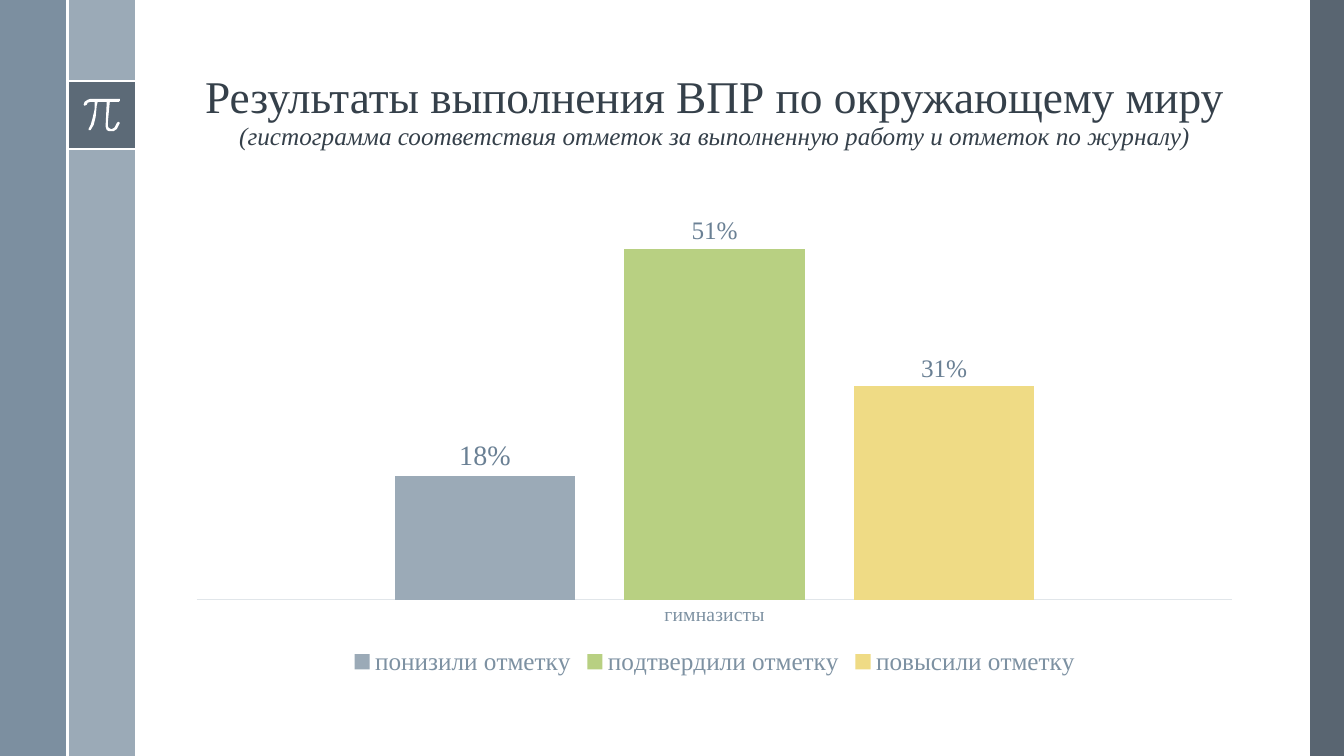
from lxml import etree
from pptx import Presentation
from pptx.chart import data as chart_data
from pptx.dml.color import RGBColor
from pptx.enum import chart as chart_enum, shapes, text
from pptx.oxml import ns
from pptx.util import Cm, Pt

FONT = "Times New Roman"
COLORS = {
    "dark": "475562",
    "steel": "6A8093",
    "mist": "9BAAB7",
    "white": "FFFFFF",
    "title": "35404A",
    "chart_text": "465562",
    "axis_text": "7D91A2",
    "label_text": "6A8094",
    "axis_line": "E1E6EA",
    "green": "B8D082",
    "yellow": "EFDB85",
}
PAGE_WIDTH, PAGE_HEIGHT = 33.87, 19.05
BAND = 1.7  # width of each left band and side of the square tab
TAB_TOP = 2.05
CONTENT_LEFT, CONTENT_WIDTH = 4.42, 27.18

# Outline of the pi sign, in hundredths of an inch
PI_OUTLINE = [
    (118, 98), (90, 98), (87, 99), (84.5, 101), (83, 104), (83.5, 105),
    (84.5, 105), (85.5, 104), (87, 102), (90, 101), (94, 101), (93.5, 108),
    (92, 117), (90, 124), (87.5, 127.5), (88, 129), (89, 129.3), (90, 129),
    (93, 124), (95, 116), (96.5, 105), (97, 101), (106, 101), (104.7, 122),
    (104.8, 125.5), (106.5, 128.7), (108, 129.7), (110, 130), (113, 129.5),
    (116, 127.5), (118, 124.5), (119, 122), (118, 121), (117, 121),
    (116, 122), (114.5, 125.5), (113, 127), (111, 128), (109.5, 128),
    (108, 127), (107, 125), (107, 122), (109, 101), (118, 101),
    (119, 100.5), (119, 98.5),
]


def rgb(name):
    return RGBColor.from_string(COLORS[name])


def style_font(font, size, color):
    font.name = FONT
    font.size = Pt(size)
    font.color.rgb = rgb(color)


def fill_shape(shape, color, opacity=100):
    shape.shadow.inherit = False
    shape.line.fill.background()
    shape.fill.solid()
    shape.fill.fore_color.rgb = rgb(color)
    if opacity < 100:
        color_node = shape.fill._xPr.find(".//" + ns.qn("a:srgbClr"))
        etree.SubElement(color_node, ns.qn("a:alpha"), val=str(opacity * 1000))


def add_band(page, left, top, width, height, color, opacity=100):
    band = page.shapes.add_shape(
        shapes.MSO_SHAPE.RECTANGLE, Cm(left), Cm(top), Cm(width), Cm(height))
    fill_shape(band, color, opacity)


def add_rule(page, x1, y1, x2, y2):
    rule = page.shapes.add_connector(
        shapes.MSO_CONNECTOR.STRAIGHT, Cm(x1), Cm(y1), Cm(x2), Cm(y2))
    rule.line.color.rgb = rgb("white")
    rule.line.width = Pt(1.5)
    etree.SubElement(rule._element.spPr, ns.qn("a:effectLst"))


def add_pi_sign(page):
    start, *rest = PI_OUTLINE
    builder = page.shapes.build_freeform(*start, scale=Cm(2.54) / 100)
    builder.add_line_segments(rest, close=True)
    fill_shape(builder.convert_to_shape(), "white")


def add_span(para, words, size, italic=False):
    span = para.add_run()
    span.text = words
    style_font(span.font, size, "title")
    span.font.italic = italic


def fill_title(page):
    box = page.shapes.title
    box.left, box.top = Cm(CONTENT_LEFT), Cm(0.48)
    box.width, box.height = Cm(CONTENT_WIDTH), Cm(3.45)
    frame = box.text_frame
    frame.word_wrap = True
    frame.auto_size = text.MSO_AUTO_SIZE.NONE
    frame.vertical_anchor = text.MSO_ANCHOR.BOTTOM
    para = frame.paragraphs[0]
    para.alignment = text.PP_ALIGN.CENTER
    para.line_spacing = 0.9
    add_span(para, "Результаты выполнения ВПР по окружающему миру", 32.4)
    para.add_line_break()
    # The break takes the size of the heading line
    line_break = para._p.find(ns.qn("a:br"))
    etree.SubElement(line_break, ns.qn("a:rPr"), sz="3240")
    add_span(para, "(гистограмма соответствия отметок за выполненную работу "
                   "и отметок по журналу)", 18, italic=True)


def style_series(series, color, label_size):
    series.format.fill.solid()
    series.format.fill.fore_color.rgb = rgb(color)
    labels = series.data_labels
    labels.show_value = True
    labels.number_format = "0%"
    labels.number_format_is_linked = False
    labels.position = chart_enum.XL_LABEL_POSITION.OUTSIDE_END
    style_font(labels.font, label_size, "label_text")


def add_results_chart(page):
    results = [
        ("понизили отметку", 0.18, "mist", 20),
        ("подтвердили отметку", 0.51, "green", 18),
        ("повысили отметку", 0.31, "yellow", 18),
    ]
    data = chart_data.CategoryChartData(number_format="0%")
    data.categories = ["гимназисты"]
    for name, share, _, _ in results:
        data.add_series(name, [share])
    chart = page.shapes.add_chart(
        chart_enum.XL_CHART_TYPE.COLUMN_CLUSTERED, Cm(CONTENT_LEFT), Cm(4.45),
        Cm(CONTENT_WIDTH), Cm(12.7), data).chart
    chart.has_title = False
    style_font(chart.font, 10, "chart_text")

    # Columns
    plot = chart.plots[0]
    plot.vary_by_categories = False
    plot.gap_width = 219
    plot.overlap = -27
    for series, (_, _, color, label_size) in zip(plot.series, results):
        style_series(series, color, label_size)

    # Axes
    groups = chart.category_axis
    groups.major_tick_mark = chart_enum.XL_TICK_MARK.NONE
    groups.format.line.color.rgb = rgb("axis_line")
    groups.format.line.width = Pt(0.75)
    style_font(groups.tick_labels.font, 14, "axis_text")
    shares = chart.value_axis
    shares.visible = False
    shares.has_major_gridlines = False
    shares.minimum_scale, shares.maximum_scale = 0, 0.6

    # Legend
    chart.has_legend = True
    chart.legend.position = chart_enum.XL_LEGEND_POSITION.BOTTOM
    chart.legend.include_in_layout = False
    style_font(chart.legend.font, 18, "axis_text")


def main():
    deck = Presentation()
    deck.slide_width, deck.slide_height = Cm(PAGE_WIDTH), Cm(PAGE_HEIGHT)
    page = deck.slides.add_slide(deck.slide_layouts[5])

    # Side bands and the tab with the pi sign
    add_band(page, 33.02, 0, 0.85, PAGE_HEIGHT, "dark", 90)
    add_band(page, BAND, 0, BAND, PAGE_HEIGHT, "mist")
    add_band(page, 0, 0, BAND, PAGE_HEIGHT, "steel", 88)
    add_band(page, BAND, TAB_TOP, BAND, BAND, "dark", 75)
    for y in (TAB_TOP, TAB_TOP + BAND):
        add_rule(page, BAND, y, 2 * BAND, y)
    add_pi_sign(page)
    add_rule(page, BAND, 0, BAND, PAGE_HEIGHT)

    # Content
    fill_title(page)
    add_results_chart(page)
    deck.save("out.pptx")


if __name__ == "__main__":
    main()
